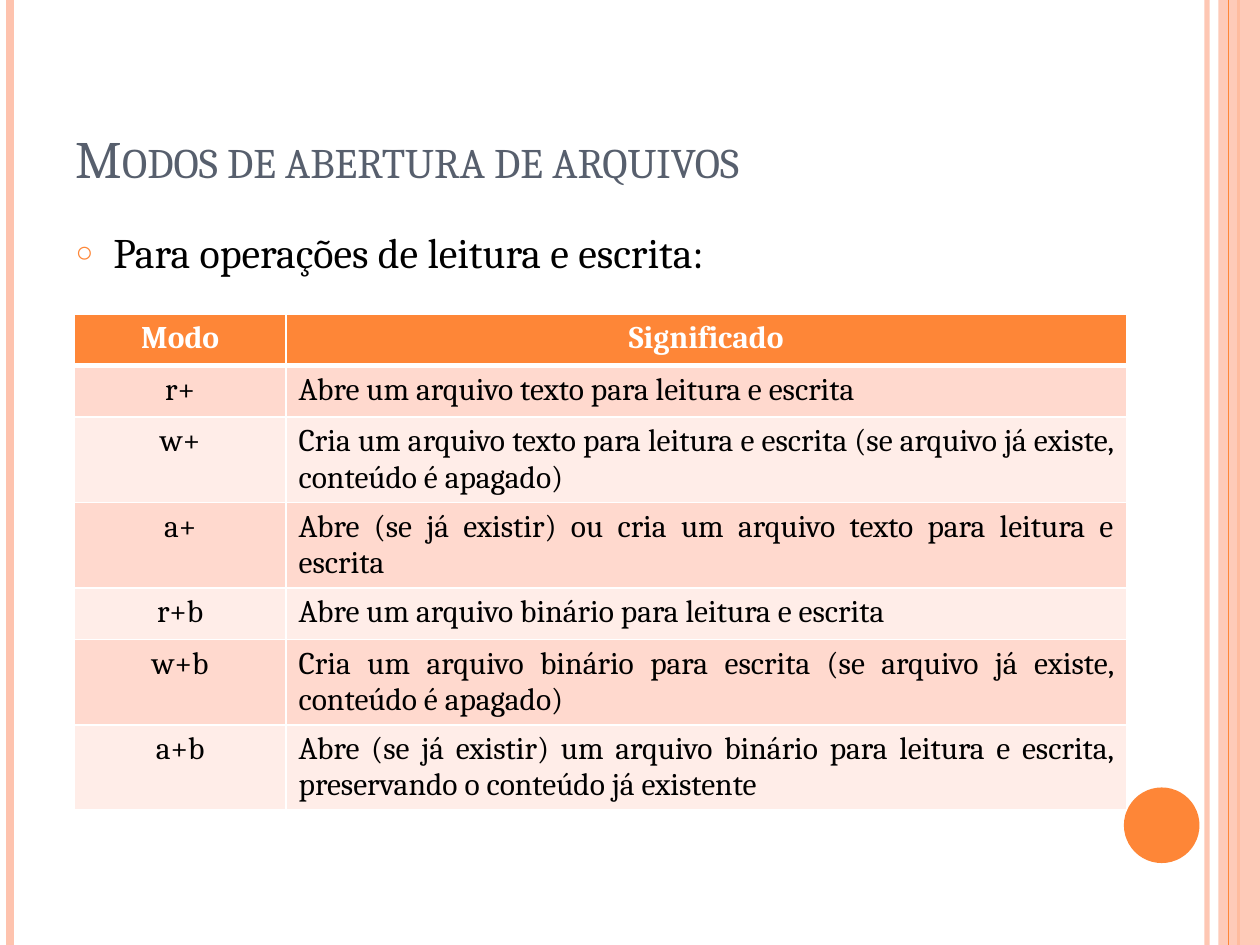
import pptx
import pptx.dml.color
import pptx.enum.shapes
import pptx.enum.text
import pptx.oxml
import pptx.oxml.ns
import pptx.util
from pptx.util import Inches

COLORS = {
    "orange": "FE8637",
    "peach": "FEC3AE",
    "slate": "575F6D",
    "black": "000000",
    "white": "FFFFFF",
    "odd_row": "FFD9CE",
    "even_row": "FFEDE8",
}
NAMESPACE = pptx.oxml.ns.nsdecls("a")
ALIGN = pptx.enum.text.PP_ALIGN


def rgb(name):
    return pptx.dml.color.RGBColor.from_string(COLORS[name])


def format_text(paragraph, size, color, bold=False):
    for run in paragraph.runs:
        run.font.name = "Cambria"
        run.font.size = pptx.util.Pt(size)
        run.font.bold = bold
        run.font.color.rgb = rgb(color)


presentation = pptx.Presentation()
presentation.slide_width = Inches(10)
presentation.slide_height = Inches(7.5)
slide = presentation.slides.add_slide(presentation.slide_layouts[1])
title, body = slide.placeholders

# Side stripes and circle, from back to front: x, colour, width, opacity
stripes = [
    (9.58, "peach", 3, 93),
    (0.08, "peach", 4.5, 100),
    (9.83, "orange", 1.5, 100),
    (9.75, "orange", 0.75, 100),
]
lines = []
for x, color, width, opacity in stripes:
    line = slide.shapes.add_connector(
        pptx.enum.shapes.MSO_CONNECTOR.STRAIGHT,
        Inches(x), Inches(0), Inches(x), Inches(7.5))
    line.line.color.rgb = rgb(color)
    line.line.width = pptx.util.Pt(width)
    line._element.spPr.append(pptx.oxml.parse_xml(f"<a:effectLst {NAMESPACE}/>"))
    if opacity < 100:
        line_color = line._element.spPr.find(".//" + pptx.oxml.ns.qn("a:srgbClr"))
        line_color.append(pptx.oxml.parse_xml(f'<a:alpha {NAMESPACE} val="{opacity * 1000}"/>'))
    lines.append(line)

SHAPE = pptx.enum.shapes.MSO_SHAPE
ornaments = []
for kind, color, box in [
    (SHAPE.RECTANGLE, "peach", (9.67, 0, 0.33, 7.5)),
    (SHAPE.OVAL, "orange", (8.92, 6.25, 0.6, 0.6)),
]:
    shape = slide.shapes.add_shape(kind, *map(Inches, box))
    shape.shadow.inherit = False
    shape.fill.solid()
    shape.fill.fore_color.rgb = rgb(color)
    shape.line.fill.background()
    ornaments.append(shape)
band = ornaments[0]
band_color = band._element.spPr.find(".//" + pptx.oxml.ns.qn("a:srgbClr"))
band_color.append(pptx.oxml.parse_xml(f'<a:alpha {NAMESPACE} val="87000"/>'))
lines[-1]._element.addprevious(band._element)

# Title
title.left, title.top, title.width, title.height = map(Inches, (0.5, 0.3, 8.17, 1.25))
title.text_frame.text = "Modos de abertura de arquivos"
title.text_frame.auto_size = pptx.enum.text.MSO_AUTO_SIZE.NONE
title.text_frame.vertical_anchor = pptx.enum.text.MSO_ANCHOR.BOTTOM
paragraph = title.text_frame.paragraphs[0]
paragraph.alignment = ALIGN.LEFT
format_text(paragraph, 30, "slate")
paragraph.runs[0].font._element.set("cap", "small")

# Bulleted lead-in
body.left, body.top, body.width, body.height = map(Inches, (0.5, 1.75, 8.17, 5.33))
body.text_frame.text = "Para operações de leitura e escrita:"
body.text_frame.auto_size = pptx.enum.text.MSO_AUTO_SIZE.NONE
paragraph = body.text_frame.paragraphs[0]
paragraph.space_before = pptx.util.Pt(6)
format_text(paragraph, 24, "black")
properties = paragraph._element.get_or_add_pPr()
properties.set("marL", str(Inches(0.3)))
properties.set("indent", str(-Inches(0.3)))
for bullet_part in (
    f'<a:buClr {NAMESPACE}><a:srgbClr val="{COLORS["orange"]}"/></a:buClr>',
    f'<a:buSzPct {NAMESPACE} val="70000"/>',
    f'<a:buChar {NAMESPACE} char="○"/>',
):
    properties.append(pptx.oxml.parse_xml(bullet_part))

# Table of modes
rows = [
    ("Modo", "Significado"),
    ("r+", "Abre um arquivo texto para leitura e escrita"),
    ("w+", "Cria um arquivo texto para leitura e escrita (se arquivo já existe, conteúdo é apagado)"),
    ("a+", "Abre (se já existir) ou cria um arquivo texto para leitura e escrita"),
    ("r+b", "Abre um arquivo binário para leitura e escrita"),
    ("w+b", "Cria um arquivo binário para escrita (se arquivo já existe, conteúdo é apagado)"),
    ("a+b", "Abre (se já existir) um arquivo binário para leitura e escrita, "
            "preservando o conteúdo já existente"),
]
row_height = 0.41
table = slide.shapes.add_table(
    len(rows), 2, Inches(0.59), Inches(2.49),
    Inches(8.35), Inches(row_height * len(rows))).table
table.columns[0].width = Inches(1.68)
table.columns[1].width = Inches(6.67)

for row_index, row in enumerate(rows):
    table.rows[row_index].height = Inches(row_height)
    header = row_index == 0
    fill = "orange" if header else "odd_row" if row_index % 2 else "even_row"
    for column_index, text in enumerate(row):
        cell = table.cell(row_index, column_index)
        cell.fill.solid()
        cell.fill.fore_color.rgb = rgb(fill)
        cell.text_frame.text = text
        paragraph = cell.text_frame.paragraphs[0]
        paragraph.alignment = ALIGN.CENTER if header or column_index == 0 else ALIGN.JUSTIFY
        format_text(paragraph, 18, "white" if header else "black", bold=header)

        # White rules, thicker between header and body
        widths = {"lnL": 1, "lnR": 1, "lnT": 3 if row_index == 1 else 1, "lnB": 3 if header else 1}
        for position, (side, width) in enumerate(widths.items()):
            cell._tc.get_or_add_tcPr().insert(position, pptx.oxml.parse_xml(
                f'<a:{side} {NAMESPACE} w="{pptx.util.Pt(width)}"><a:solidFill>'
                f'<a:srgbClr val="{COLORS["white"]}"/></a:solidFill></a:{side}>'))
table.cell(2, 1).vertical_anchor = pptx.enum.text.MSO_ANCHOR.MIDDLE

presentation.save("out.pptx")
